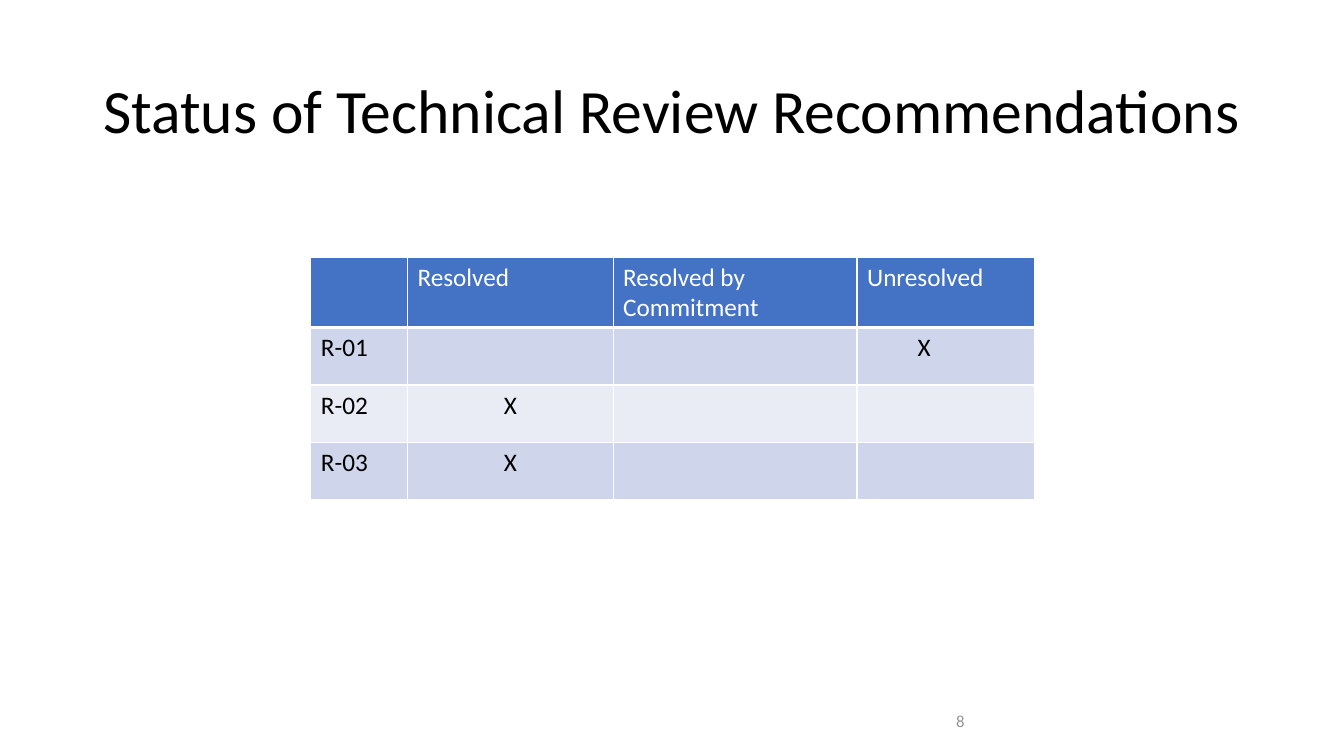
from lxml import etree
from pptx import Presentation
from pptx.dml.color import RGBColor
from pptx.enum.text import MSO_ANCHOR, PP_ALIGN
from pptx.oxml.ns import qn
from pptx.util import Pt

MIDDLE = MSO_ANCHOR.MIDDLE
LEFT, CENTER, RIGHT = PP_ALIGN.LEFT, PP_ALIGN.CENTER, PP_ALIGN.RIGHT

WHITE = RGBColor(0xFF, 0xFF, 0xFF)
BLACK = RGBColor(0x00, 0x00, 0x00)
GRAY = RGBColor(0x96, 0x96, 0x96)
HEADER_BLUE = RGBColor(0x44, 0x72, 0xC4)
BAND_FILLS = (RGBColor(0xCF, 0xD5, 0xEA), RGBColor(0xE9, 0xEB, 0xF5))

COLUMN_WIDTHS = (69.1, 146.9, 174.2, 126.7)
ROW_HEIGHTS = (49.7, 41, 41, 41)
STATUS_ROWS = (
    ("", "Resolved", "Resolved by Commitment", "Unresolved"),
    ("R-01", "", "", "X"),
    ("R-02", "X", "", ""),
    ("R-03", "X", "", ""),
)
UNRESOLVED_COLUMN = 3
UNRESOLVED_MARK_MARGIN = 43.2


def write_text(paragraph, text, size, color, alignment=LEFT):
    paragraph.alignment = alignment
    run = paragraph.add_run()
    run.text = text
    run.font.color.rgb = color
    font_format = {"name": "Calibri", "size": Pt(size), "bold": False}
    for attribute, value in font_format.items():
        setattr(run.font, attribute, value)


def add_label(slide, box, text, size, color, alignment):
    shape = slide.shapes.add_textbox(*(Pt(length) for length in box))
    frame = shape.text_frame
    frame.word_wrap = True
    frame.vertical_anchor = MIDDLE
    paragraph = frame.paragraphs[0]
    paragraph.line_spacing = 0.9
    write_text(paragraph, text, size, color, alignment)


def add_borders(cell, bottom_width):
    properties = cell._tc.get_or_add_tcPr()
    widths = {"a:lnL": 1, "a:lnR": 1, "a:lnT": 1, "a:lnB": bottom_width}
    for tag, width in widths.items():
        line = etree.SubElement(properties, qn(tag), w=str(Pt(width)))
        fill = etree.SubElement(line, qn("a:solidFill"))
        etree.SubElement(fill, qn("a:srgbClr"), val=str(WHITE))


def add_status_table(slide, box):
    table = slide.shapes.add_table(
        len(STATUS_ROWS), len(COLUMN_WIDTHS), *(Pt(length) for length in box)
    ).table
    for column, width in zip(table.columns, COLUMN_WIDTHS):
        column.width = Pt(width)
    for row, height in zip(table.rows, ROW_HEIGHTS):
        row.height = Pt(height)

    for row_index, texts in enumerate(STATUS_ROWS):
        is_header = row_index == 0
        for column_index, text in enumerate(texts):
            cell = table.cell(row_index, column_index)
            add_borders(cell, 3 if is_header else 1)
            cell.fill.solid()
            cell.fill.fore_color.rgb = (
                HEADER_BLUE if is_header else BAND_FILLS[(row_index - 1) % 2]
            )
            if not text:
                continue
            alignment = LEFT
            if text == "X":
                # Marks are centred, except the indented unresolved one
                if column_index == UNRESOLVED_COLUMN:
                    cell.margin_left = Pt(UNRESOLVED_MARK_MARGIN)
                else:
                    alignment = CENTER
            write_text(cell.text_frame.paragraphs[0], text, 18,
                       WHITE if is_header else BLACK, alignment)


def build_status_slide(presentation):
    slide = presentation.slides.add_slide(presentation.slide_layouts[6])
    # Title
    add_label(slide, (66, 28.8, 828, 104.4),
              "Status of Technical Review Recommendations", 44, BLACK, CENTER)
    # Recommendation status
    add_status_table(slide, (222, 183.6, sum(COLUMN_WIDTHS), sum(ROW_HEIGHTS)))
    # Page number
    add_label(slide, (636, 504, 60, 24), "8", 12, GRAY, RIGHT)


def main():
    presentation = Presentation()
    presentation.slide_width = Pt(960)
    presentation.slide_height = Pt(540)
    build_status_slide(presentation)
    presentation.save("out.pptx")


if __name__ == "__main__":
    main()
